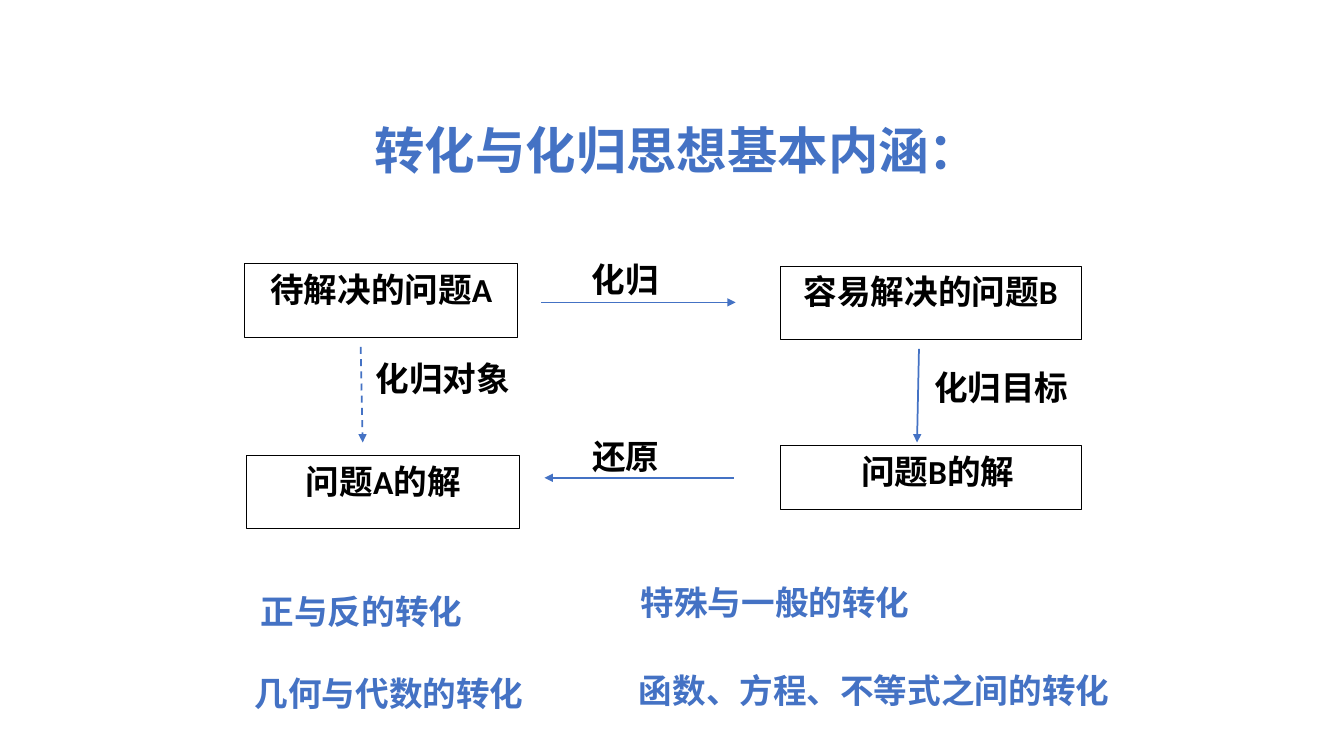
from lxml import etree
from pptx import Presentation
from pptx.dml.color import RGBColor
from pptx.enum.dml import MSO_LINE
from pptx.enum.shapes import MSO_CONNECTOR, MSO_SHAPE
from pptx.enum.text import MSO_ANCHOR, MSO_AUTO_SIZE, PP_ALIGN
from pptx.oxml.ns import qn
from pptx.util import Cm, Pt

RECTANGLE = MSO_SHAPE.RECTANGLE
STRAIGHT = MSO_CONNECTOR.STRAIGHT
DASH = MSO_LINE.DASH
TOP, MIDDLE = MSO_ANCHOR.TOP, MSO_ANCHOR.MIDDLE
CENTER, JUSTIFY = PP_ALIGN.CENTER, PP_ALIGN.JUSTIFY
FIT_SHAPE = MSO_AUTO_SIZE.SHAPE_TO_FIT_TEXT

COLORS = {"blue": "4472C4", "black": "000000", "white": "FFFFFF"}
LATIN, CHINESE = "Calibri", "Noto Sans CJK SC"

# Each entry: text, left, top, width, height, relative to the diagram (cm)
PROBLEMS = [
    ("待解决的问题A", 0, 0, 6.88, 1.85),
    ("容易解决的问题B", 13.49, 0.06, 7.59, 1.85),
    ("问题A的解", 0.05, 4.83, 6.88, 1.85),
    ("问题B的解", 13.49, 4.58, 7.59, 1.6),
]
LABELS = [
    ("化归", 8.49, -0.25, 3.05, 1.75),
    ("化归目标", 17.12, 2.47, 4.62, 1.75),
    ("还原", 8.51, 4.22, 3.05, 1.75),
    ("化归对象", 3.05, 2.24, 4.62, 1.75),
]
# Each entry: start x, start y, end x, end y, dash style
ARROWS = [
    (7.47, 0.97, 12.37, 0.97, None),
    (16.99, 2.14, 16.94, 4.5, None),
    (12.32, 5.39, 7.55, 5.39, None),
    (2.92, 2.09, 2.97, 4.5, DASH),
]
# Each entry: text, left, top, width, relative to the list (cm)
CONVERSIONS = [
    ("正与反的转化", 0.15, 0.21, 5.66),
    ("特殊与一般的转化", 9.73, 0, 7.39),
    ("几何与代数的转化", 0, 2.29, 7.39),
    ("函数、方程、不等式之间的转化", 9.68, 2.21, 12.55),
]


def color(name):
    return RGBColor.from_string(COLORS[name])


def write(box, text, size, font, color_name, align=None):
    box.text_frame.text = text
    para = box.text_frame.paragraphs[0]
    para.alignment = align
    span = para.runs[0]
    span.font.size = Pt(size)
    span.font.bold = True
    span.font.name = font
    span.font.color.rgb = color(color_name)
    east_asian = etree.SubElement(span.font._element, qn("a:ea"))
    east_asian.set("typeface", CHINESE)
    return para


def add_title(page, left, top, width, height):
    box = page.shapes.add_textbox(Cm(left), Cm(top), Cm(width), Cm(height))
    box.text_frame.word_wrap = True
    box.text_frame.vertical_anchor = MIDDLE
    para = write(box, "转化与化归思想基本内涵：", 36, CHINESE, "blue")
    para.line_spacing = 0.9


def add_rectangle(page, text, left, top, width, height, align):
    box = page.shapes.add_shape(RECTANGLE, Cm(left), Cm(top), Cm(width), Cm(height))
    box.shadow.inherit = False
    box.fill.solid()
    box.fill.fore_color.rgb = color("white")
    box.line.fill.background()
    box.text_frame.word_wrap = True
    box.text_frame.vertical_anchor = TOP
    write(box, text, 24, LATIN, "black", align)
    return box


def add_arrow(page, start_x, start_y, end_x, end_y, dash):
    arrow = page.shapes.add_connector(
        STRAIGHT, Cm(start_x), Cm(start_y), Cm(end_x), Cm(end_y))
    arrow.line.color.rgb = color("blue")
    arrow.line.width = Pt(1.25)
    if dash:
        arrow.line.dash_style = dash
    properties = arrow._element.spPr
    etree.SubElement(properties.find(qn("a:ln")), qn("a:tailEnd"), type="triangle")
    etree.SubElement(properties, qn("a:effectLst"))


def add_diagram(page, left, top):
    """Place the cycle of problems and solutions from its top left corner."""
    for text, x, y, width, height in LABELS:
        add_rectangle(page, text, left + x, top + y, width, height, JUSTIFY)
    for text, x, y, width, height in PROBLEMS:
        box = add_rectangle(page, text, left + x, top + y, width, height, CENTER)
        box.line.color.rgb = color("black")
        box.line.width = Pt(0.75)
        if text == "问题B的解":
            box.text_frame.margin_left = Cm(0.6)
    for start_x, start_y, end_x, end_y, dash in ARROWS:
        add_arrow(page, left + start_x, top + start_y, left + end_x, top + end_y, dash)


def add_conversions(page, left, top):
    for text, x, y, width in CONVERSIONS:
        box = page.shapes.add_textbox(Cm(left + x), Cm(top + y), Cm(width), Cm(1.27))
        box.text_frame.word_wrap = False
        box.text_frame.auto_size = FIT_SHAPE
        write(box, text, 24, CHINESE, "blue")


def main():
    deck = Presentation()
    deck.slide_width, deck.slide_height = Cm(33.87), Cm(19.05)
    page = deck.slides.add_slide(deck.slide_layouts[6])
    add_title(page, 9.19, 2.41, 16, 2.9)
    add_diagram(page, 6.17, 6.65)
    add_conversions(page, 6.17, 14.55)
    deck.save("out.pptx")


if __name__ == "__main__":
    main()
